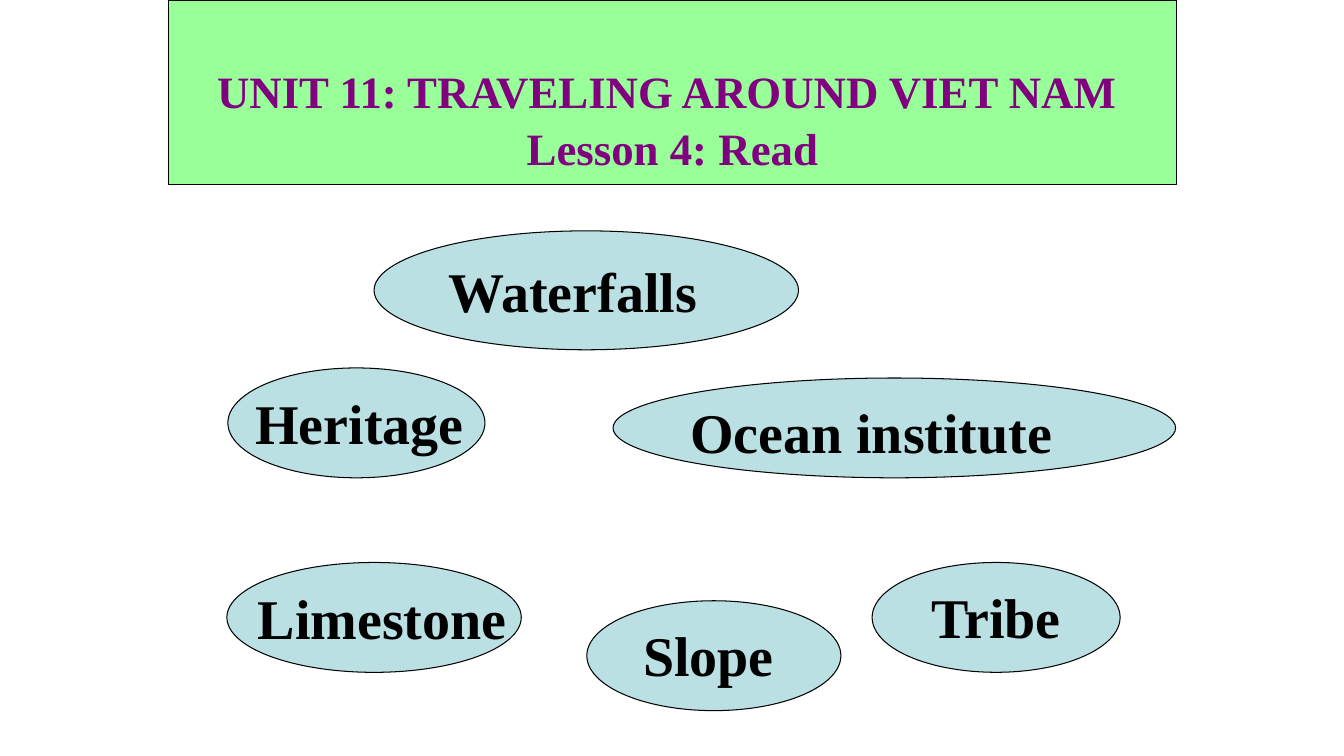
from pptx import Presentation
from pptx.dml.color import RGBColor
from pptx.enum.shapes import MSO_SHAPE
from pptx.enum.text import MSO_ANCHOR, MSO_AUTO_SIZE, PP_ALIGN
from pptx.util import Inches, Pt

OVAL = MSO_SHAPE.OVAL
BOTTOM = MSO_ANCHOR.BOTTOM
NO_FIT, GROW = MSO_AUTO_SIZE.NONE, MSO_AUTO_SIZE.SHAPE_TO_FIT_TEXT
CENTER = PP_ALIGN.CENTER

GREEN = RGBColor(0x99, 0xFF, 0x99)
PURPLE = RGBColor(0x80, 0x00, 0x80)
PALE_BLUE = RGBColor(0xBB, 0xE0, 0xE3)
BLACK = RGBColor(0x00, 0x00, 0x00)
FONT = "Times New Roman"
LABEL_HEIGHT = 0.77

TITLE_LINES = ["UNIT 11: TRAVELING AROUND VIET NAM ", "Lesson 4: Read"]

# word, oval box, label offset inside the oval, label width
WORDS = [
    ("Waterfalls", (3.71, 2.29, 4.21, 1.18), (0.62, 0.21), 2.7),
    ("Heritage", (2.26, 3.65, 2.55, 1.09), (0.16, 0.16), 2.29),
    ("Ocean institute", (6.08, 3.75, 5.58, 0.99), (0.64, 0.14), 3.84),
    ("Limestone", (2.25, 5.58, 2.92, 1.09), (0.19, 0.16), 2.7),
    ("Slope", (5.82, 5.96, 2.52, 1.09), (0.45, 0.15), 1.51),
    ("Tribe", (8.65, 5.58, 2.46, 1.09), (0.48, 0.15), 1.5),
]


def style_paragraph(para, size, color):
    para.alignment = CENTER
    para.font.name = FONT
    para.font.size = Pt(size)
    para.font.bold = True
    para.font.color.rgb = color


def paint(shape, color):
    """Fill the shape and give it a thin black outline."""
    shape.fill.solid()
    shape.fill.fore_color.rgb = color
    shape.line.color.rgb = BLACK
    shape.line.width = Pt(0.75)


def add_title(page, left, top, width, height):
    title = page.shapes.title
    title.left, title.top = Inches(left), Inches(top)
    title.width, title.height = Inches(width), Inches(height)
    paint(title, GREEN)
    frame = title.text_frame
    frame.text = "\n".join(TITLE_LINES)
    frame.auto_size = NO_FIT
    frame.word_wrap = False
    frame.vertical_anchor = BOTTOM
    frame.margin_bottom = Inches(0.1)
    for para in frame.paragraphs:
        style_paragraph(para, 32, PURPLE)
        para.line_spacing = 1.05


def add_word(page, word, box, offset, label_width):
    left, top, width, height = box
    oval = page.shapes.add_shape(
        OVAL, Inches(left), Inches(top), Inches(width), Inches(height))
    oval.shadow.inherit = False
    paint(oval, PALE_BLUE)

    label = page.shapes.add_textbox(
        Inches(left + offset[0]), Inches(top + offset[1]),
        Inches(label_width), Inches(LABEL_HEIGHT))
    frame = label.text_frame
    frame.text = word
    frame.word_wrap = False
    frame.auto_size = GROW
    style_paragraph(frame.paragraphs[0], 40, BLACK)


def main():
    deck = Presentation()
    deck.slide_width, deck.slide_height = Inches(13.33), Inches(7.5)
    page = deck.slides.add_slide(deck.slide_layouts.get_by_name("Title Only"))
    add_title(page, 1.67, 0, 10, 1.83)
    for word in WORDS:
        add_word(page, *word)
    deck.save("out.pptx")


if __name__ == "__main__":
    main()
